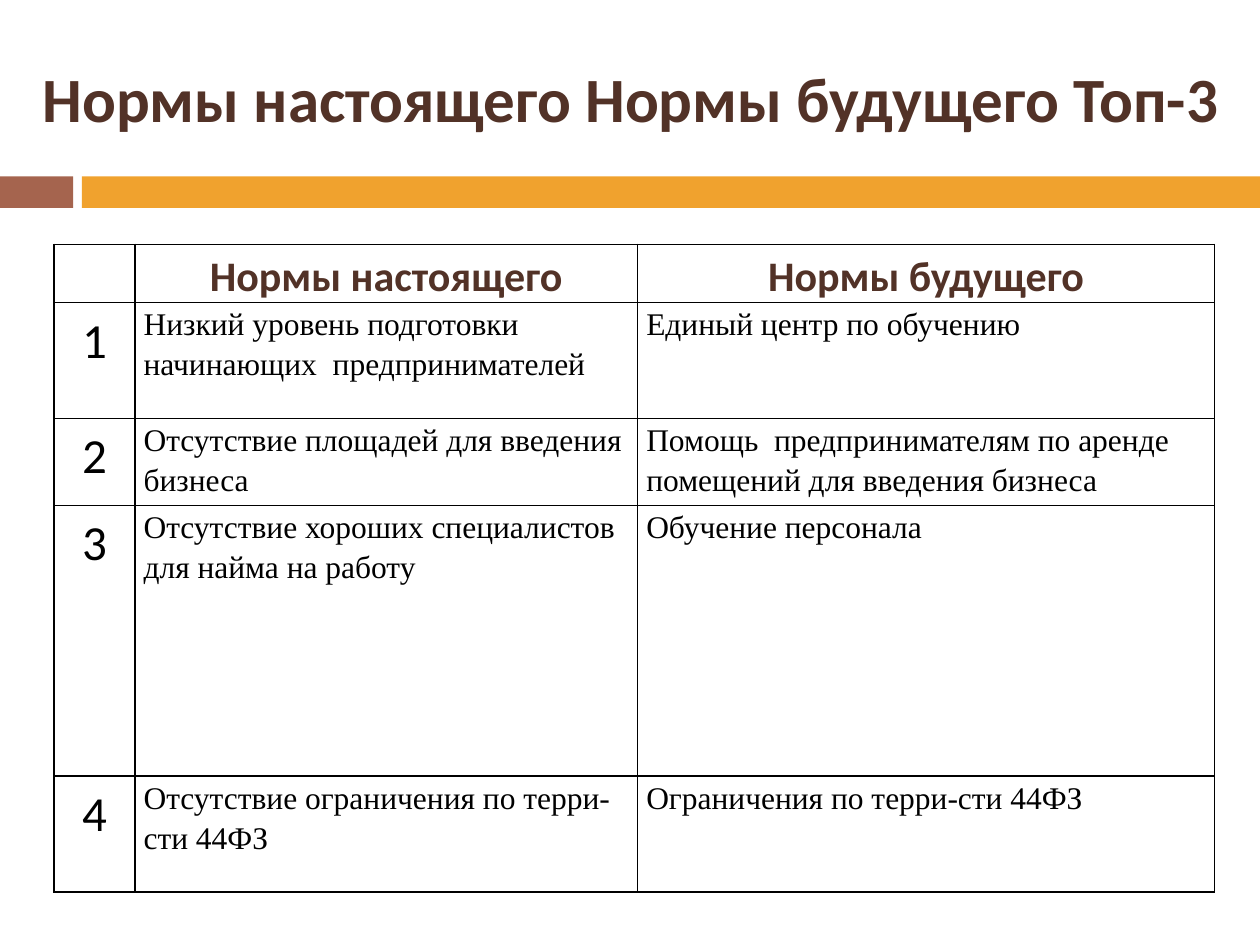
from dataclasses import dataclass

from lxml import etree
from pptx import Presentation
from pptx.dml.color import RGBColor
from pptx.enum.shapes import MSO_SHAPE
from pptx.enum.text import MSO_ANCHOR, PP_ALIGN
from pptx.oxml.ns import qn
from pptx.util import Inches, Pt

RECT = MSO_SHAPE.RECTANGLE
MIDDLE = MSO_ANCHOR.MIDDLE
LEFT, CENTER = PP_ALIGN.LEFT, PP_ALIGN.CENTER


@dataclass(frozen=True)
class Theme:
    brown: str = "523227"
    rust: str = "A5644E"
    amber: str = "F0A22E"
    black: str = "000000"
    sans: str = "Calibri"
    serif: str = "Times New Roman"
    title: int = 36
    number: int = 28
    head: int = 24
    body: int = 18


THEME = Theme()

ROWS = [
    ("", "Нормы настоящего", "Нормы будущего"),
    ("1", "Низкий уровень подготовки начинающих  предпринимателей",
     "Единый центр по обучению"),
    ("2", "Отсутствие площадей для введения бизнеса",
     "Помощь  предпринимателям по аренде помещений для введения бизнеса"),
    ("3", "Отсутствие хороших специалистов для найма на работу",
     "Обучение персонала"),
    ("4", "Отсутствие ограничения по терри-сти 44ФЗ",
     "Ограничения по терри-сти 44ФЗ"),
]
WIDTHS = (0.64, 3.99, 4.58)
HEIGHTS = (0.46, 0.92, 0.67, 2.15, 0.92)


def write(frame, text, size, font=THEME.sans, color=THEME.black,
          bold=False, align=LEFT, spacing=1.0):
    frame.word_wrap = True
    par = frame.paragraphs[0]
    par.alignment = align
    par.line_spacing = spacing
    run = par.add_run()
    run.text = text
    run.font.size = Pt(size)
    run.font.name = font
    run.font.bold = bold
    run.font.color.rgb = RGBColor.from_string(color)


def add_title(slide, left, top, width, height):
    box = slide.shapes.add_textbox(
        Inches(left), Inches(top), Inches(width), Inches(height))
    box.text_frame.vertical_anchor = MIDDLE
    write(box.text_frame, "Нормы настоящего Нормы будущего Топ-3",
          THEME.title, color=THEME.brown, bold=True, align=CENTER)


def add_band(slide, left, top, width, height):
    """Draw a short rust bar and a long amber bar with a gap between."""
    short, gap = 0.58, 0.07
    start = short + gap
    bars = ((left, short, THEME.rust),
            (left + start, width - start, THEME.amber))
    for x, span, color in bars:
        bar = slide.shapes.add_shape(
            RECT, Inches(x), Inches(top), Inches(span), Inches(height))
        bar.shadow.inherit = False
        bar.fill.solid()
        bar.fill.fore_color.rgb = RGBColor.from_string(color)
        bar.line.fill.background()


def add_rules(cell):
    """Draw a thin black line on each side of the cell."""
    props = cell._tc.get_or_add_tcPr()
    for place, side in enumerate(("a:lnL", "a:lnR", "a:lnT", "a:lnB")):
        line = etree.Element(qn(side), w=str(Pt(1)))
        fill = etree.SubElement(line, qn("a:solidFill"))
        etree.SubElement(fill, qn("a:srgbClr"), val=THEME.black)
        props.insert(place, line)


def add_norms(slide, left, top, width, height):
    table = slide.shapes.add_table(
        len(ROWS), len(WIDTHS), Inches(left), Inches(top),
        Inches(width), Inches(height)).table
    table.first_row = table.horz_banding = False
    for col, span in zip(table.columns, WIDTHS):
        col.width = Inches(span)
    for row, span in zip(table.rows, HEIGHTS):
        row.height = Inches(span)

    head = dict(size=THEME.head, color=THEME.brown, bold=True, align=CENTER)
    number = dict(size=THEME.number, align=CENTER)
    body = dict(size=THEME.body, font=THEME.serif)
    for r, texts in enumerate(ROWS):
        for c, text in enumerate(texts):
            cell = table.cell(r, c)
            cell.fill.background()
            cell.margin_left = cell.margin_right = Inches(0.07)
            cell.margin_top = cell.margin_bottom = 0
            add_rules(cell)
            if text:
                look = head if r == 0 else number if c == 0 else body
                write(cell.text_frame, text, spacing=1.15, **look)


def main():
    deck = Presentation()
    deck.slide_width, deck.slide_height = Inches(10), Inches(7.5)
    slide = deck.slides.add_slide(deck.slide_layouts[6])
    add_band(slide, 0, 1.4, 10, 0.25)
    add_title(slide, 0.16, 0.23, 9.69, 1.08)
    add_norms(slide, 0.43, 1.94, sum(WIDTHS), sum(HEIGHTS))
    deck.save("out.pptx")


if __name__ == "__main__":
    main()
